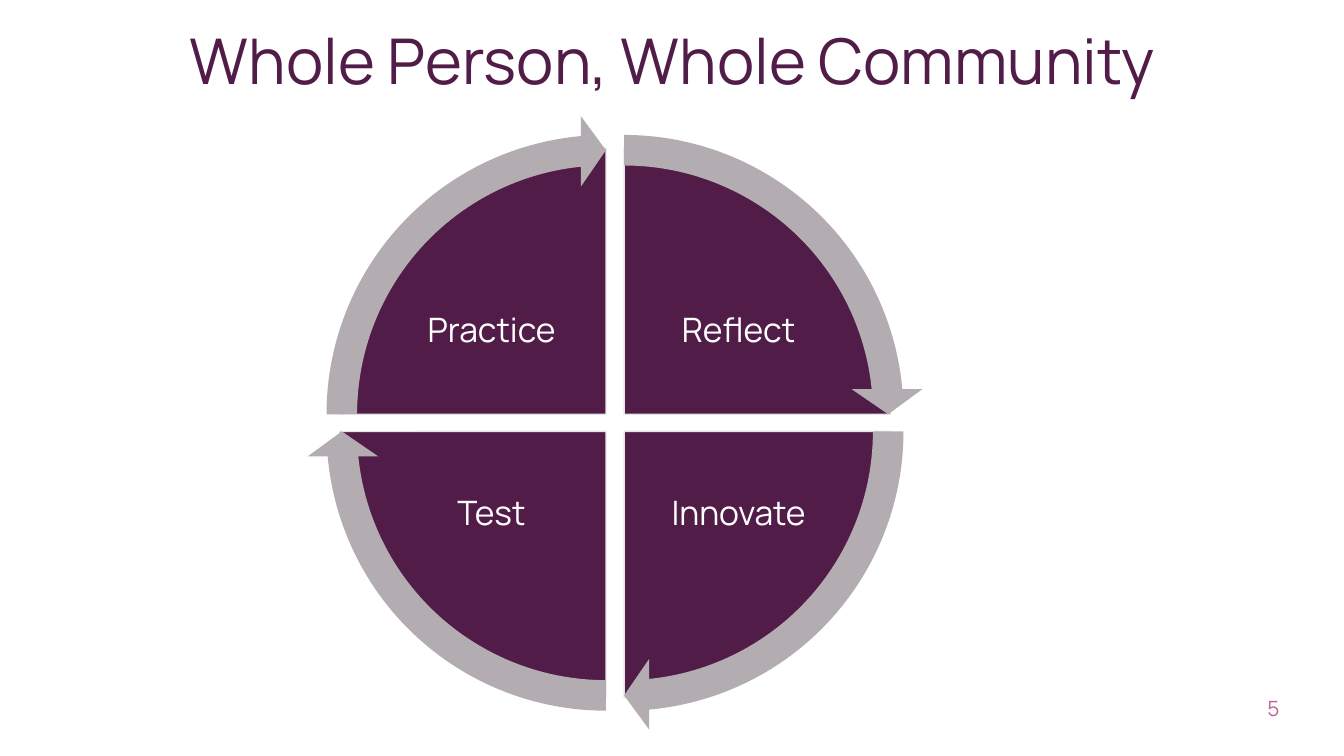
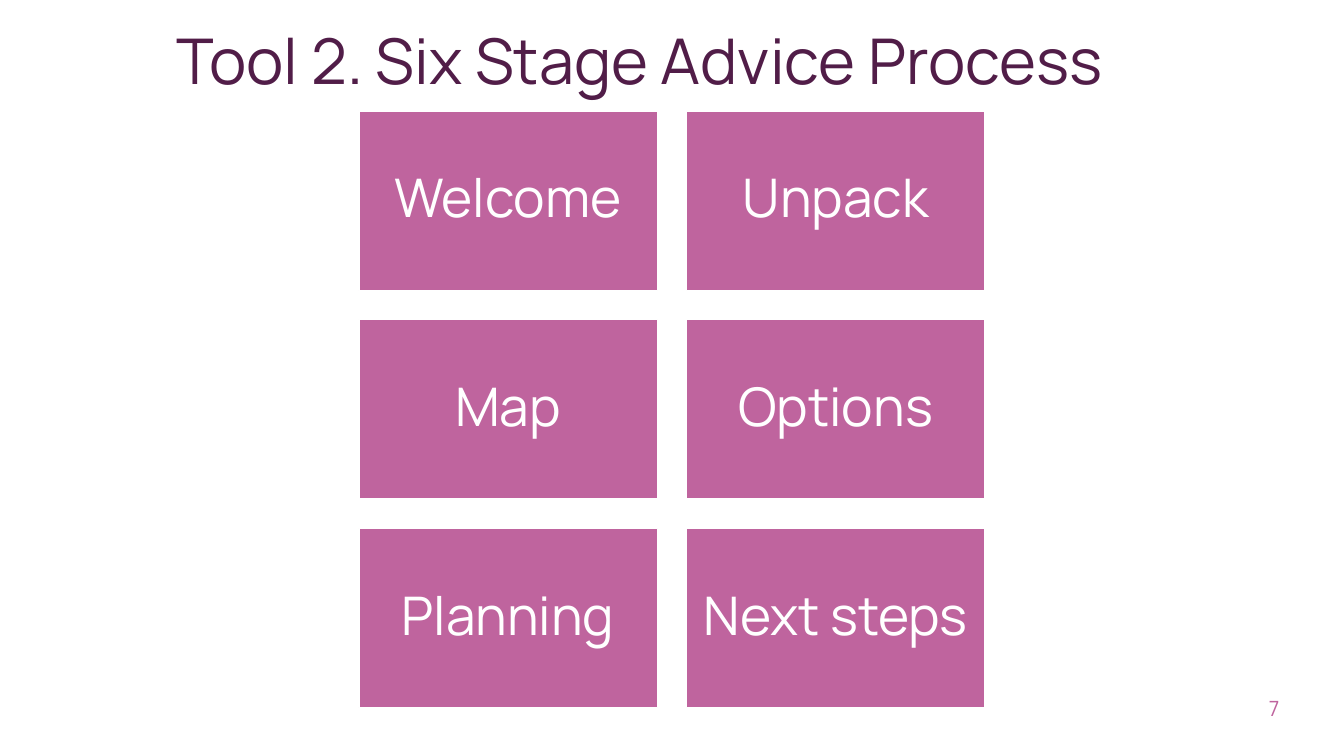
from pptx import Presentation
from pptx.dml.color import RGBColor
from pptx.enum.shapes import MSO_SHAPE
from pptx.enum.text import MSO_ANCHOR, PP_ALIGN
from pptx.util import Inches, Pt

FONT = "Manrope"
COLORS = {
    "plum": "511D48",
    "pink": "BF649E",
    "grey": "B3ACB1",
    "edge": "E7E6E6",
    "white": "FFFFFF",
}
QUARTER = 54
QUADRANTS = [
    ("Reflect", 1, 0, 3 * QUARTER),
    ("Innovate", 1, 1, 0),
    ("Test", 0, 1, QUARTER),
    ("Practice", 0, 0, 2 * QUARTER),
]
STAGES = ["Welcome", "Unpack", "Map", "Options", "Planning", "Next steps"]


def rgb(name):
    """Return the palette colour of that name."""
    return RGBColor.from_string(COLORS[name])


def write(sp, text, size, color, align=PP_ALIGN.CENTER, anchor=MSO_ANCHOR.MIDDLE,
          inset=0, spacing=0.9):
    """Fill a shape's text frame with one styled run."""
    tf = sp.text_frame
    tf.word_wrap = True
    tf.vertical_anchor = anchor
    tf.margin_left = tf.margin_right = Inches(inset)
    tf.margin_top = tf.margin_bottom = Inches(inset)
    p = tf.paragraphs[0]
    p.alignment = align
    p.line_spacing = spacing
    r = p.add_run()
    r.text = text
    r.font.name = FONT
    r.font.size = Pt(size)
    r.font.color.rgb = rgb(color)


def add_text(s, box, text, size, color, **style):
    """Add a text box."""
    sp = s.shapes.add_textbox(*map(Inches, box))
    write(sp, text, size, color, **style)


def add_shape(s, kind, box, fill, line=None, adjustments=()):
    """Add a flat preset shape."""
    sp = s.shapes.add_shape(kind, *map(Inches, box))
    sp.shadow.inherit = False
    sp.fill.solid()
    sp.fill.fore_color.rgb = rgb(fill)
    if line:
        sp.line.color.rgb = rgb(line)
        sp.line.width = Pt(1)
    else:
        sp.line.fill.background()
    for i, value in enumerate(adjustments):
        sp.adjustments[i] = value
    return sp


def add_slide(prs, title, title_box, number):
    """Add a blank slide with its title and page number."""
    s = prs.slides.add_slide(prs.slide_layouts[6])
    add_text(s, (12.05, 6.85, 0.64, 0.35), number, 15, "pink",
             align=PP_ALIGN.RIGHT, spacing=1.0)
    add_text(s, title_box, title, 45, "plum", anchor=MSO_ANCHOR.TOP)
    return s


def add_cycle(s, box, size=5.28):
    """Draw four quarter pies with labels, circled by arrows."""
    left, top, width, height = box
    label_w, label_h, label_x, label_y, rim = 1.95, 1.45, 0.53, 1.09, 0.33
    arrows = []
    for text, col, row, start in QUADRANTS:
        x = left + col * (width - size)
        y = top + row * (height - size)
        add_shape(s, MSO_SHAPE.PIE, (x, y, size, size), "plum", "edge",
                  (start, (start + QUARTER) % (4 * QUARTER)))
        dx = size - label_x - label_w if col else label_x
        dy = size - label_y - label_h if row else label_y
        add_text(s, (x + dx, y + dy, label_w, label_h), text, 24, "white",
                 inset=0.03)
        arrows.append((x - rim, y - rim, start))
    outer = size + 2 * rim
    for x, y, start in arrows:
        add_shape(s, MSO_SHAPE.CIRCULAR_ARROW, (x, y, outer, outer), "grey",
                  adjustments=(0.051, 3.275, start + 50.725, start, 0.059))


def add_stages(s, box, cols=2, tile_w=2.96, tile_h=1.78):
    """Spread the stage tiles evenly over a grid."""
    left, top, width, height = box
    rows = len(STAGES) // cols
    step_x = (width - tile_w) / (cols - 1)
    step_y = (height - tile_h) / (rows - 1)
    for i, text in enumerate(STAGES):
        row, col = divmod(i, cols)
        tile = (left + col * step_x, top + row * step_y, tile_w, tile_h)
        sp = add_shape(s, MSO_SHAPE.RECTANGLE, tile, "pink", "white")
        write(sp, text, 38, "white", inset=0.16)


def main():
    """Build and save the presentation."""
    prs = Presentation()
    prs.slide_width, prs.slide_height = Inches(13.33), Inches(7.5)
    s = add_slide(prs, "Whole Person, Whole Community", (0.18, 0.3, 12.98, 0.96), "5")
    add_cycle(s, (3.37, 1.47, 5.46, 5.45))
    s = add_slide(prs, "Tool 2. Six Stage Advice Process", (0.64, 0.3, 11.41, 0.96), "7")
    add_stages(s, (3.56, 1.1, 6.21, 5.92))
    prs.save("out.pptx")


if __name__ == "__main__":
    main()
